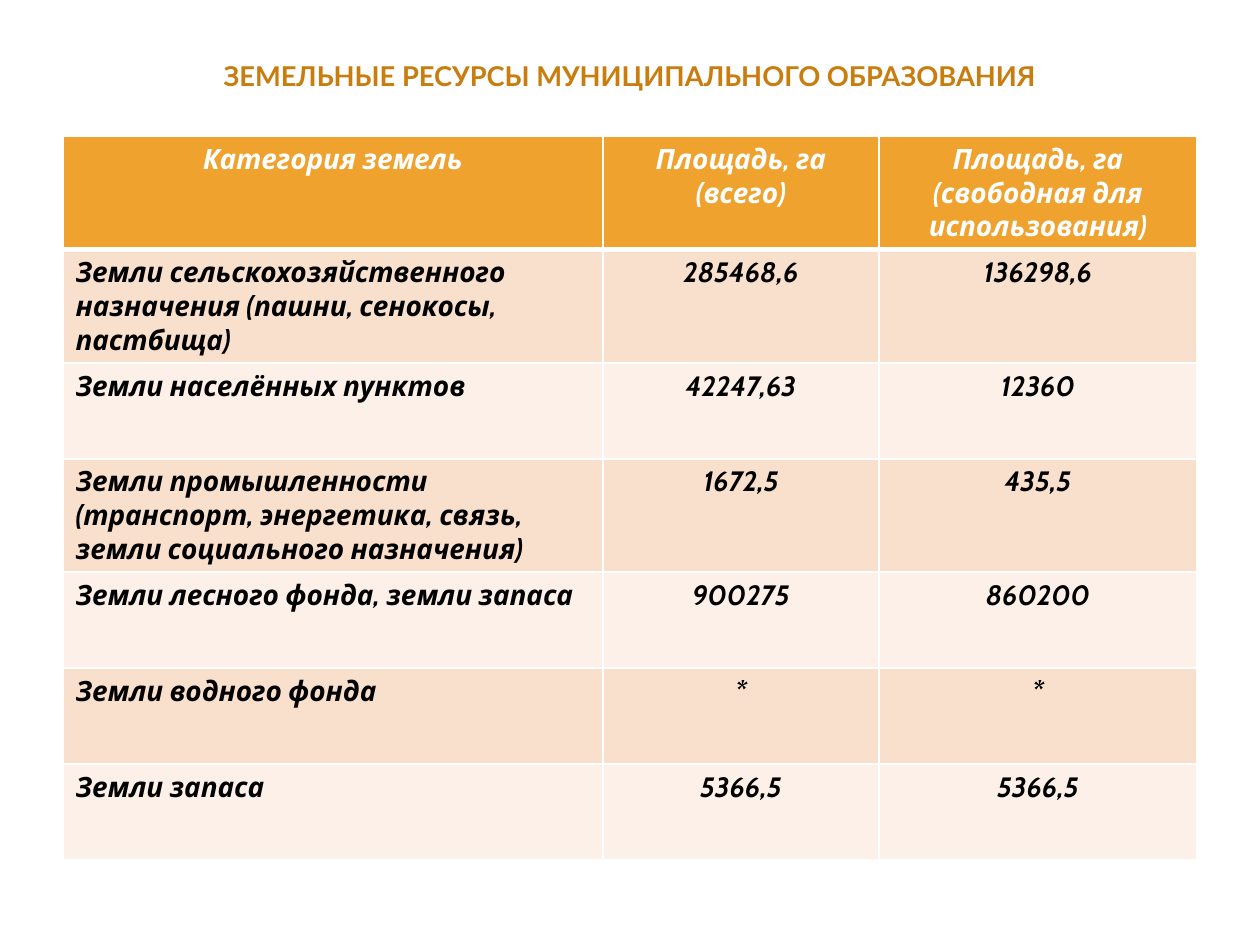
from dataclasses import dataclass

from lxml.etree import SubElement
from pptx import Presentation
from pptx.dml.color import RGBColor
from pptx.enum.text import PP_ALIGN
from pptx.oxml.ns import qn
from pptx.util import Pt

EMU_PER_PX = 914400 / 126
COLUMN_WIDTHS = (540, 276, 318)
ROW_HEIGHT = 96
WHITE, BLACK = "FFFFFF", "000000"
TITLE_COLOR, HEADER_FILL = "C87D0E", "F0A22E"
BAND_FILLS = ("F9E0CD", "FCF0E8")


@dataclass
class LandRow:
    category: str
    total: str
    available: str

    def texts(self) -> tuple[str, str, str]:
        return self.category, self.total, self.available


HEADER = LandRow("Категория земель", "Площадь, га\n(всего)",
                 "Площадь, га\n(свободная для использования)")
LAND_ROWS = [
    LandRow("Земли сельскохозяйственного назначения (пашни, сенокосы, пастбища)",
            "285468,6", "136298,6"),
    LandRow("Земли населённых пунктов", "42247,63", "12360"),
    LandRow("Земли промышленности (транспорт, энергетика, связь, "
            "земли социального назначения)", "1672,5", "435,5"),
    LandRow("Земли лесного фонда, земли запаса", "900275", "860200"),
    LandRow("Земли водного фонда", "*", "*"),
    LandRow("Земли запаса", "5366,5", "5366,5"),
]


def px(length: int) -> int:
    return round(length * EMU_PER_PX)


def color(value: str) -> RGBColor:
    return RGBColor.from_string(value)


def style_paragraph(paragraph, font_name: str, size: float, text_color: str,
                    alignment, italic: bool = False) -> None:
    paragraph.alignment = alignment
    font = paragraph.font
    font.name, font.size = font_name, Pt(size)
    font.bold, font.italic = True, italic
    font.color.rgb = color(text_color)


def set_borders(cell, top: int, bottom: int) -> None:
    properties = cell._tc.get_or_add_tcPr()
    for side, width in (("L", 1), ("R", 1), ("T", top), ("B", bottom)):
        line = SubElement(properties, qn(f"a:ln{side}"), w=str(Pt(width)))
        fill = SubElement(line, qn("a:solidFill"))
        SubElement(fill, qn("a:srgbClr"), val=WHITE)


def add_title(slide, text: str) -> None:
    shape = slide.shapes.add_textbox(px(63), px(53), px(1134), px(73))
    shape.text_frame.word_wrap = True
    paragraph = shape.text_frame.paragraphs[0]
    paragraph.text = text
    style_paragraph(paragraph, "Lato", 15.6, TITLE_COLOR, PP_ALIGN.CENTER)


def fill_cell(cell, text: str, row: int, column: int) -> None:
    is_header = row == 0
    # The header is set off by a thicker rule
    set_borders(cell, top=3 if row == 1 else 1, bottom=3 if is_header else 1)
    cell.fill.solid()
    cell.fill.fore_color.rgb = color(
        HEADER_FILL if is_header else BAND_FILLS[(row - 1) % 2])
    cell.text = text
    centered = is_header or column > 0
    for paragraph in cell.text_frame.paragraphs:
        style_paragraph(paragraph, "Cabin", 16, WHITE if is_header else BLACK,
                        PP_ALIGN.CENTER if centered else PP_ALIGN.LEFT, italic=True)


def add_land_table(slide, rows: list[LandRow]) -> None:
    table = slide.shapes.add_table(
        len(rows), len(COLUMN_WIDTHS), px(63), px(136),
        px(sum(COLUMN_WIDTHS)), px(ROW_HEIGHT * len(rows))).table
    for column, width in zip(table.columns, COLUMN_WIDTHS):
        column.width = px(width)
    for row_index, land_row in enumerate(rows):
        table.rows[row_index].height = px(ROW_HEIGHT)
        for column_index, text in enumerate(land_row.texts()):
            fill_cell(table.cell(row_index, column_index), text,
                      row_index, column_index)


def main() -> None:
    presentation = Presentation()
    presentation.slide_width, presentation.slide_height = px(1260), px(945)
    slide = presentation.slides.add_slide(presentation.slide_layouts[6])

    # Title
    add_title(slide, "ЗЕМЕЛЬНЫЕ РЕСУРСЫ МУНИЦИПАЛЬНОГО ОБРАЗОВАНИЯ")

    # Land areas by category
    add_land_table(slide, [HEADER, *LAND_ROWS])

    presentation.save("out.pptx")


if __name__ == "__main__":
    main()
